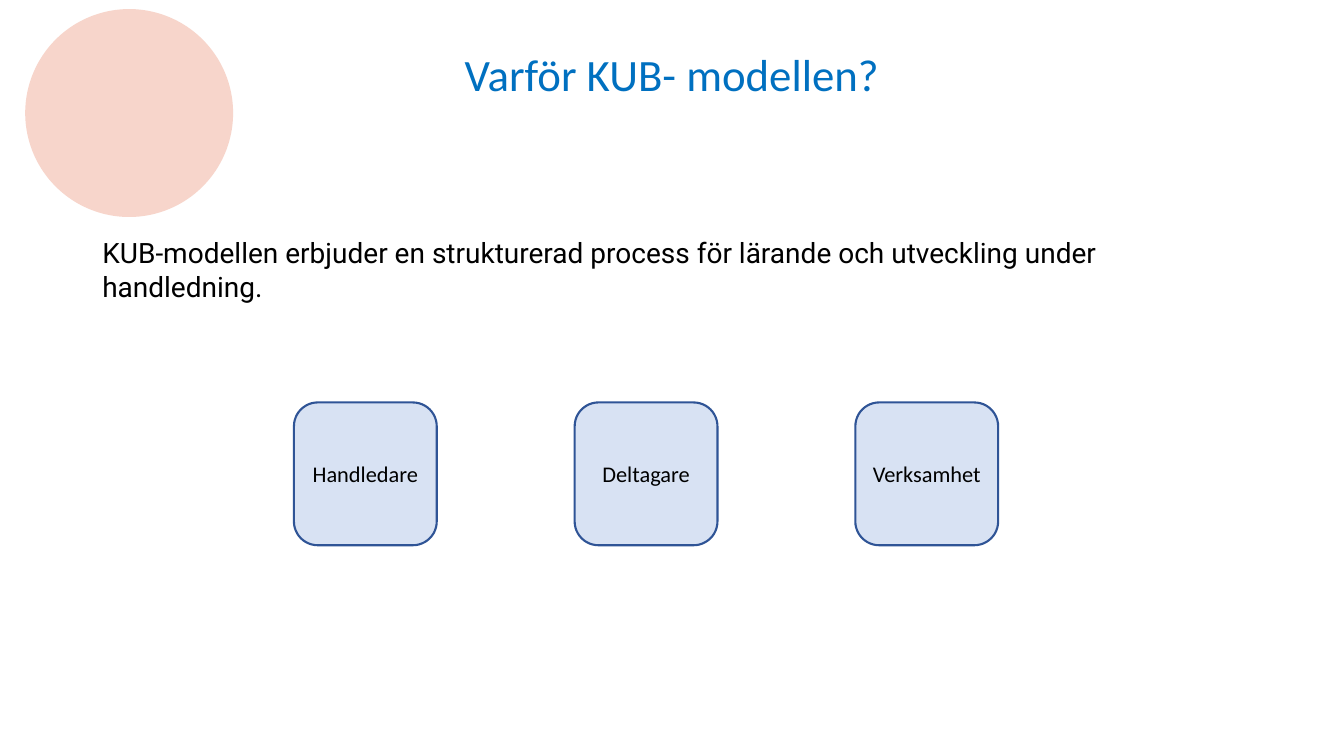
"""Build the slide on why the KUB model is used."""
from dataclasses import dataclass

from pptx import Presentation
from pptx.dml.color import RGBColor
from pptx.enum.shapes import MSO_SHAPE
from pptx.enum.text import MSO_ANCHOR, PP_ALIGN
from pptx.util import Pt

OVAL, ROUNDED = MSO_SHAPE.OVAL, MSO_SHAPE.ROUNDED_RECTANGLE
LEFT, CENTER = PP_ALIGN.LEFT, PP_ALIGN.CENTER
TOP, MIDDLE = MSO_ANCHOR.TOP, MSO_ANCHOR.MIDDLE


@dataclass(frozen=True)
class Theme:
    title: RGBColor = RGBColor(0x00, 0x70, 0xC0)
    text: RGBColor = RGBColor(0x00, 0x00, 0x00)
    box_fill: RGBColor = RGBColor(0xD8, 0xE2, 0xF3)
    box_line: RGBColor = RGBColor(0x2F, 0x54, 0x96)
    circle: RGBColor = RGBColor(0xF7, 0xD5, 0xCB)
    heading_font: str = "Calibri"
    body_font: str = "Roboto"
    title_size: int = 32
    body_size: int = 20
    box_size: int = 16


theme = Theme()


def write(sp, text, font, size, color, align, anchor):
    tf = sp.text_frame
    tf.text = text
    tf.word_wrap = True
    tf.vertical_anchor = anchor
    p = tf.paragraphs[0]
    p.alignment = align
    r = p.runs[0]
    r.font.name = font
    r.font.size = Pt(size)
    r.font.color.rgb = color
    return p


def add_filled(kind, left, top, size, color):
    sp = s.shapes.add_shape(kind, Pt(left), Pt(top), Pt(size), Pt(size))
    sp.shadow.inherit = False
    sp.fill.solid()
    sp.fill.fore_color.rgb = color
    return sp


prs = Presentation()
prs.slide_width, prs.slide_height = Pt(960), Pt(540)
s = prs.slides.add_slide(prs.slide_layouts[6])

title = s.shapes.add_textbox(Pt(66), Pt(28.75), Pt(828), Pt(52))
p = write(title, "Varför KUB- modellen?", theme.heading_font,
          theme.title_size, theme.title, CENTER, MIDDLE)
p.line_spacing = 0.9

body = s.shapes.add_textbox(Pt(66), Pt(165), Pt(828), Pt(273.5))
write(body, "KUB-modellen erbjuder en strukturerad process för lärande och "
      "utveckling under handledning.", theme.body_font, theme.body_size,
      theme.text, LEFT, TOP)

for i, role in enumerate(("Handledare", "Deltagare", "Verksamhet")):
    box = add_filled(ROUNDED, 210 + i * 200.5, 287.5, 102, theme.box_fill)
    box.line.color.rgb = theme.box_line
    box.line.width = Pt(1.5)
    write(box, role, theme.heading_font, theme.box_size, theme.text,
          CENTER, MIDDLE)

circle = add_filled(OVAL, 18, 6.5, 148.5, theme.circle)
circle.line.fill.background()

prs.save("out.pptx")
